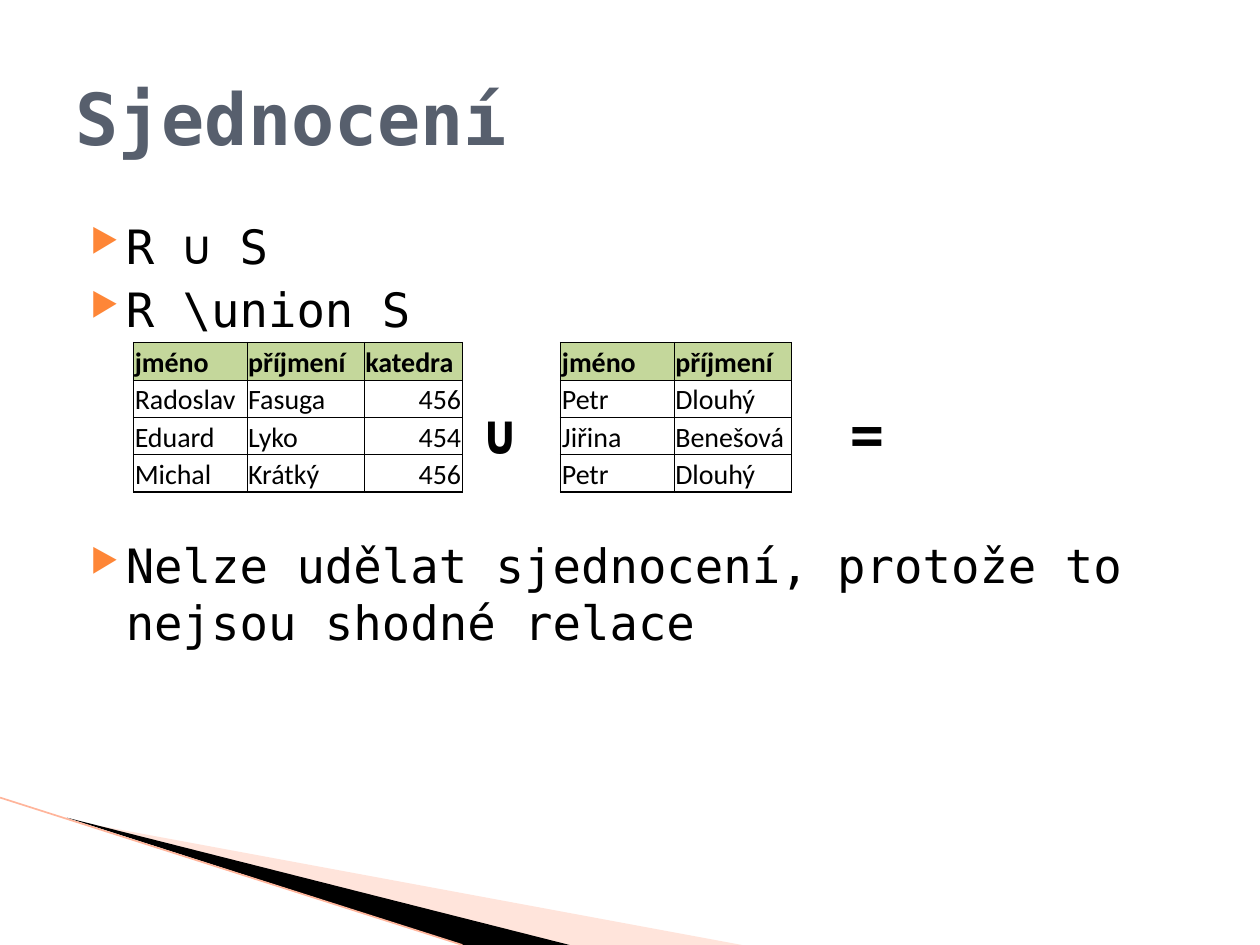
from lxml import etree
from pptx import Presentation
from pptx.dml.color import RGBColor
from pptx.enum.shapes import MSO_CONNECTOR
from pptx.enum.text import MSO_ANCHOR, PP_ALIGN
from pptx.oxml.ns import qn
from pptx.util import Inches, Pt

LINE = MSO_CONNECTOR.STRAIGHT
MIDDLE, BOTTOM = MSO_ANCHOR.MIDDLE, MSO_ANCHOR.BOTTOM
RIGHT = PP_ALIGN.RIGHT
BLACK = RGBColor(0x00, 0x00, 0x00)
SLATE = RGBColor(0x57, 0x5F, 0x6D)
GREEN = RGBColor(0xC4, 0xD7, 0x9B)
PINK = RGBColor(0xFF, 0xBC, 0xA5)
PEACH = RGBColor(0xFF, 0xB5, 0x9B)
ORANGE = RGBColor(0xFE, 0x86, 0x37)
MONO, SANS = "DejaVu Sans Mono", "Calibri"

deck = Presentation()
deck.slide_width, deck.slide_height = Inches(10), Inches(7.5)
slide = deck.slides.add_slide(deck.slide_layouts[6])
shapes = slide.shapes
# One percent of the slide's width and height
col, row = deck.slide_width / 100, deck.slide_height / 100


def style(para, size, color=BLACK, bold=False, name=MONO):
    font = para.font
    font.name, font.size, font.bold = name, Pt(size), bold
    font.color.rgb = color


def add_text(x, y, w, h, lines):
    """Add a wrapping box, placed in percent of the slide, one paragraph a line."""
    box = shapes.add_textbox(int(x * col), int(y * row), int(w * col), int(h * row))
    frame = box.text_frame
    frame.word_wrap = True
    frame.text = "\n".join(lines)
    return frame


# Corner wedges and the edge line
wedges = [
    (PINK, 40, [(5.5, 86.8), (58.9, 100), (45.2, 100)]),
    (BLACK, 100, [(5.3, 86.53), (45.2, 100), (36.7, 100)]),
]
for color, alpha, points in wedges:
    spots = [(int(x * col), int(y * row)) for x, y in points]
    pen = shapes.build_freeform(*spots[0])
    pen.add_line_segments(spots[1:], close=True)
    wedge = pen.convert_to_shape()
    wedge.shadow.inherit = False
    wedge.fill.solid()
    wedge.fill.fore_color.rgb = color
    wedge.line.fill.background()
    if alpha < 100:
        tint = wedge.fill._xPr.find(".//" + qn("a:srgbClr"))
        etree.SubElement(tint, qn("a:alpha"), val=str(alpha * 1000))

edge = shapes.add_connector(LINE, 0, int(84.4 * row), int(36.7 * col), int(100 * row))
edge.line.color.rgb = PEACH
edge.line.width = Pt(0.95)
etree.SubElement(edge._element.spPr, qn("a:effectLst"))

# Bullets, with room for the tables before the last one
body = add_text(5, 22.3, 90, 65, [
    "R ∪ S",
    "R \\union S",
    "Nelze udělat sjednocení, protože to nejsou shodné relace",
])
for para, gap in zip(body.paragraphs, (0, 4, 113.5)):
    props = para._p.get_or_add_pPr()
    props.set("marL", str(Inches(0.4)))
    props.set("indent", str(Inches(-0.28)))
    paint = etree.SubElement(props, qn("a:buClr"))
    etree.SubElement(paint, qn("a:srgbClr"), val=str(ORANGE))
    etree.SubElement(props, qn("a:buSzPct"), val="68000")
    etree.SubElement(props, qn("a:buChar"), char="▶")
    para.space_before = Pt(gap)
    style(para, 27)

title = add_text(5, 4, 90, 16.67, ["Sjednocení"])
title.vertical_anchor = MIDDLE
style(title.paragraphs[0], 41, SLATE, True)

# Relations: thick outer borders, thin inner ones
widths = (9, 9.3, 7.8)
tall = 3.95
relations = [
    (10.6, [
        ("jméno", "příjmení", "katedra"),
        ("Radoslav", "Fasuga", "456"),
        ("Eduard", "Lyko", "454"),
        ("Michal", "Krátký", "456"),
    ]),
    (44.5, [
        ("jméno", "příjmení"),
        ("Petr", "Dlouhý"),
        ("Jiřina", "Benešová"),
        ("Petr", "Dlouhý"),
    ]),
]
for left, data in relations:
    rows, cols = len(data), len(data[0])
    grid = shapes.add_table(
        rows, cols, int(left * col), int(36.27 * row),
        int(sum(widths[:cols]) * col), int(rows * tall * row)).table
    for c in range(cols):
        grid.columns[c].width = int(widths[c] * col)
    for r, record in enumerate(data):
        grid.rows[r].height = int(tall * row)
        for c, value in enumerate(record):
            cell = grid.cell(r, c)
            cell.text = value
            cell.vertical_anchor = BOTTOM
            cell.margin_left = cell.margin_right = cell.margin_top = Inches(0.01)
            cell.margin_bottom = 0
            para = cell.text_frame.paragraphs[0]
            style(para, 16, bold=r == 0, name=SANS)
            if value.isdigit():
                para.alignment = RIGHT
            props = cell._tc.get_or_add_tcPr()
            outer = {"L": c == 0, "R": c == cols - 1, "T": r == 0, "B": r == rows - 1}
            for side, thick in outer.items():
                rule = etree.SubElement(
                    props, qn("a:ln" + side), w=str(Pt(1 if thick else 0.5)))
                paint = etree.SubElement(rule, qn("a:solidFill"))
                etree.SubElement(paint, qn("a:srgbClr"), val=str(BLACK))
            if r == 0:
                cell.fill.solid()
                cell.fill.fore_color.rgb = GREEN
            else:
                cell.fill.background()

for left, sign in ((37.4, "∪"), (66.5, "=")):
    label = add_text(left, 41.47, 7.9, 8.5, [sign])
    style(label.paragraphs[0], 32, bold=True)

deck.save("out.pptx")
